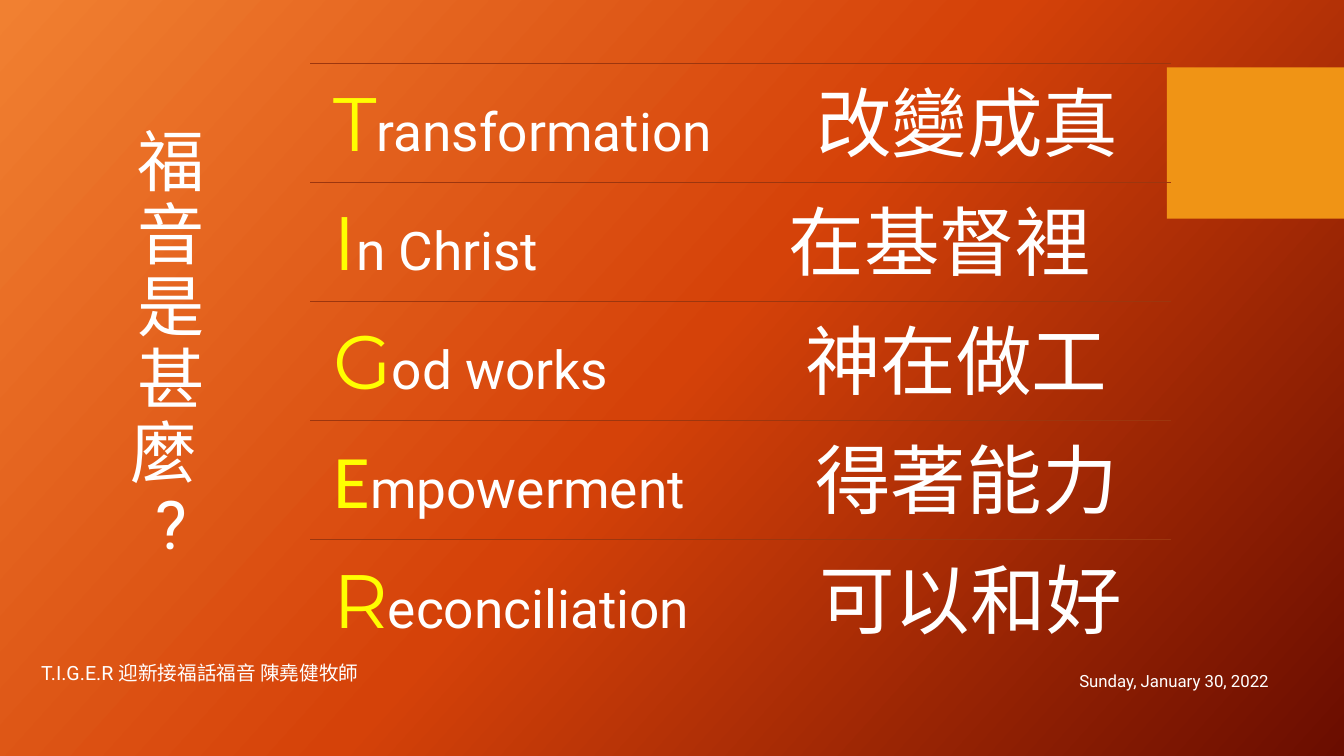
from copy import deepcopy

from lxml.etree import SubElement
from pptx import Presentation
from pptx.dml.color import RGBColor
from pptx.enum.shapes import MSO_CONNECTOR as Connector, MSO_SHAPE as Shape
from pptx.enum.text import MSO_ANCHOR as Anchor, MSO_AUTO_SIZE as AutoSize, PP_ALIGN as Align
from pptx.oxml.ns import qn
from pptx.util import Cm, Pt

# Content
QUESTION = "福\v音\v是\v甚\v麼 \v?"
SERMON = "T.I.G.E.R 迎新接福話福音 陳堯健牧師"
DATE = "Sunday, January 30, 2022"
# initial, rest of the word, Chinese meaning, its tab stop in cm, font of the initial
TIGER = [
    ("T", "ransformation", "改變成真", 12.17, "Montserrat"),
    ("I", "n Christ", "在基督裡", 11.47, "Montserrat"),
    ("G", "od works", "神在做工", 11.89, "Montserrat"),
    ("E", "mpowerment", "得著能力", 12.15, "Calibri"),
    ("R", "econciliation", "可以和好", 12.25, "Montserrat"),
]

# Look
BACKGROUND = [(0, "F18031"), (0.5, "D54209"), (1, "6A0D00")]
WHITE, YELLOW, ORANGE, RULE = "FFFFFF", "FFFF00", "F09415", "9D360E"
ROW_LEFT, ROW_TOP, ROW_WIDTH, ROW_HEIGHT = 7.82, 1.6, 21.69, 3.0
ROW_INSET = 0.58


def rgb(value):
    return RGBColor.from_string(value)


def set_all(target, values):
    for name, value in values.items():
        setattr(target, name, value)


def format_font(font, size, face, color):
    set_all(font, {"size": Pt(size), "name": face})
    font.color.rgb = rgb(color)


def format_frame(frame, inset=0, anchor=Anchor.MIDDLE):
    set_all(frame, {
        "word_wrap": True, "auto_size": AutoSize.NONE, "vertical_anchor": anchor,
        "margin_left": Cm(inset), "margin_right": Cm(inset),
        "margin_top": Cm(inset), "margin_bottom": Cm(inset),
    })


def add_box(left, top, width, height):
    return slide.shapes.add_textbox(Cm(left), Cm(top), Cm(width), Cm(height)).text_frame


def add_footer(text, left, top, width, size, align):
    frame = add_box(left, top, width, 1.02)
    format_frame(frame)
    line = frame.paragraphs[0]
    line.alignment = align
    run = line.add_run()
    run.text = text
    format_font(run.font, size, "Roboto", WHITE)


prs = Presentation()
set_all(prs, {"slide_width": Cm(33.87), "slide_height": Cm(19.05)})
slide = prs.slides.add_slide(prs.slide_layouts[5])

# Gradient background
fill = slide.background.fill
fill.gradient()
fill.gradient_angle = 360 - 42
stop_list = slide.element.find(".//" + qn("a:gsLst"))
stop_list.insert(1, deepcopy(stop_list[0]))
for stop, (position, color) in zip(fill.gradient_stops, BACKGROUND):
    stop.position = position
    stop.color.rgb = rgb(color)

# Orange tab at the right edge
tab = slide.shapes.add_shape(Shape.RECTANGLE, Cm(29.41), Cm(1.7), Cm(4.46), Cm(3.81))
tab.shadow.inherit = False
tab.fill.solid()
tab.fill.fore_color.rgb = rgb(ORANGE)
tab.line.fill.background()

# Footers
add_footer(DATE, 24.36, 16.64, 7.62, 12, Align.RIGHT)
add_footer(SERMON, 1.04, 16.43, 19.08, 14, Align.LEFT)

# Question, one character a line
title = slide.shapes.title
set_all(title, {"left": Cm(0), "top": Cm(1.07), "width": Cm(8.64), "height": Cm(15.32)})
format_frame(title.text_frame)
title.text_frame.text = QUESTION
question = title.text_frame.paragraphs[0]
set_all(question, {"alignment": Align.CENTER, "line_spacing": 0.9})
for run in question.runs:
    format_font(run.font, 48, "Roboto", WHITE)
    run.font._element.set("spc", "-100")

# Ruled rows, one for each letter
for index, (initial, rest, meaning, stop, face) in enumerate(TIGER):
    top = ROW_TOP + index * ROW_HEIGHT
    rule = slide.shapes.add_connector(
        Connector.STRAIGHT, Cm(ROW_LEFT), Cm(top), Cm(ROW_LEFT + ROW_WIDTH), Cm(top))
    rule.line.color.rgb = rgb(RULE)
    rule.line.width = Pt(0.75)
    SubElement(rule._element.spPr, qn("a:effectLst"))

    frame = add_box(ROW_LEFT, top, ROW_WIDTH, ROW_HEIGHT)
    format_frame(frame, ROW_INSET, Anchor.TOP)
    row = frame.paragraphs[0]
    row.line_spacing = 0.9
    tabs = SubElement(row._p.get_or_add_pPr(), qn("a:tabLst"))
    SubElement(tabs, qn("a:tab"), pos=str(Cm(stop)), algn="l")
    for text, size, font_name, color in [
        (initial, 54, face, YELLOW),
        (rest + "\t", 38, "Roboto", WHITE),
        (meaning, 54, "Arial", WHITE),
    ]:
        run = row.add_run()
        run.text = text
        format_font(run.font, size, font_name, color)

prs.save("out.pptx")
